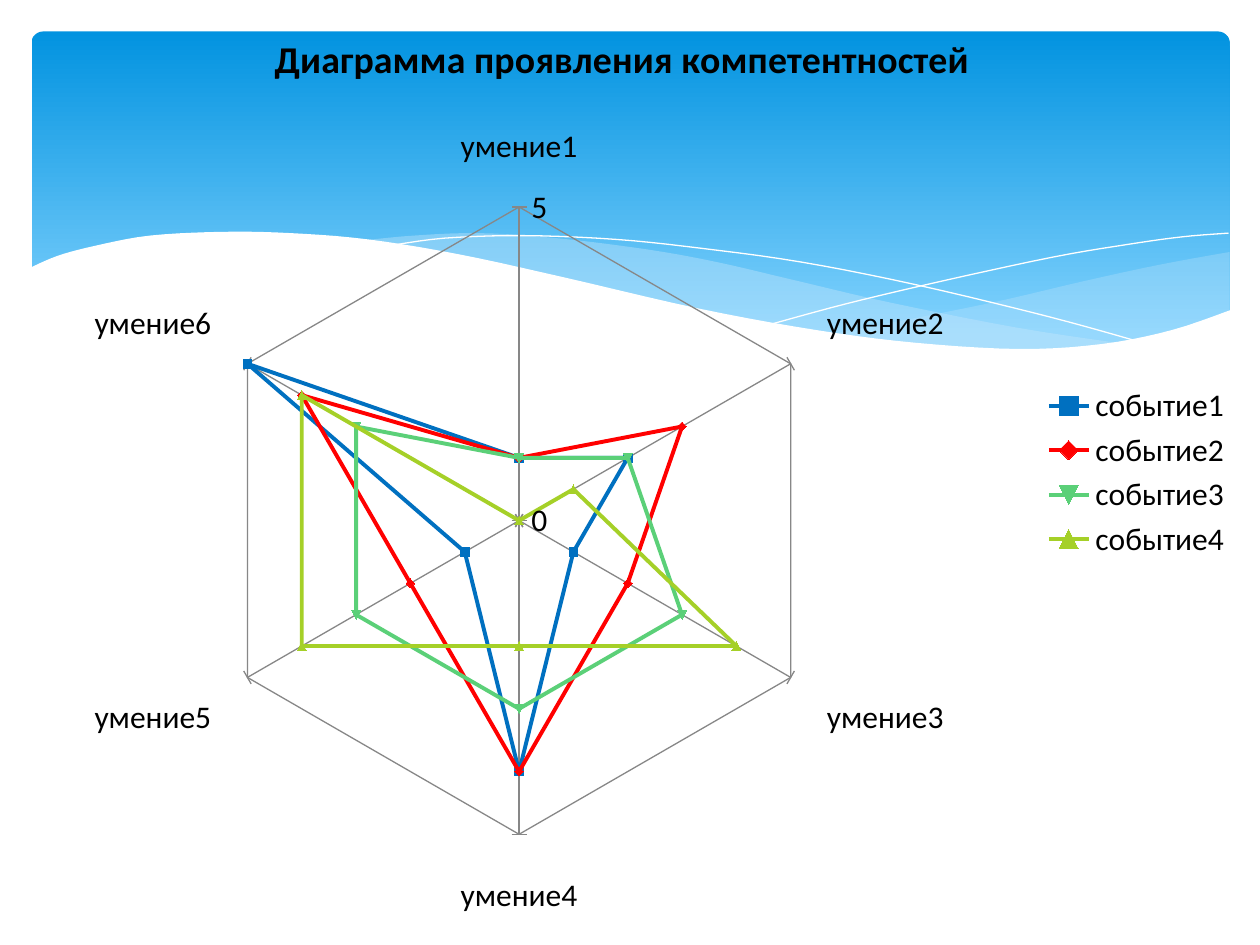
from lxml import etree
from pptx import Presentation
from pptx.chart.data import CategoryChartData
from pptx.dml.color import RGBColor
from pptx.enum.chart import XL_CHART_TYPE, XL_LEGEND_POSITION, XL_TICK_MARK
from pptx.enum.shapes import MSO_SHAPE
from pptx.oxml import parse_xml
from pptx.oxml.ns import nsdecls, qn
from pptx.util import Cm, Pt

RADAR = XL_CHART_TYPE.RADAR_MARKERS
RIGHT = XL_LEGEND_POSITION.RIGHT
OUTSIDE, CROSS = XL_TICK_MARK.OUTSIDE, XL_TICK_MARK.CROSS
ROUNDED = MSO_SHAPE.ROUNDED_RECTANGLE

FONT = "Calibri"
CM_PER_UNIT = 2.54
COLORS = {
    "text": "000000", "white": "FFFFFF", "wave": "C6E7FC", "grid": "878787",
    "sky_top": "0293E0", "sky_bottom": "83D3FE",
    "событие1": "0070C0", "событие2": "FF0000",
    "событие3": "5BD078", "событие4": "A5D028",
}
TITLE = "Диаграмма проявления компетентностей"
CATEGORIES = [f"умение{i}" for i in range(1, 7)]
SERIES = {
    "событие1": (1, 2, 1, 4, 1, 5),
    "событие2": (1, 3, 2, 4, 2, 4),
    "событие3": (1, 2, 3, 3, 3, 3),
    "событие4": (0, 1, 4, 2, 4, 4),
}
PLOT = {"x": 0.165, "y": 0.219, "w": 0.504, "h": 0.664}

WAVES = [
    {"curves": [
        [(9.76, 2), (9.21, 2.1), (8.61, 2.23), (7.79, 2.42), (6.61, 2.65)],
        [(6.61, 2.65), (7.19, 2.72), (7.69, 2.77), (8.24, 2.77),
         (8.81, 2.73), (9.35, 2.62), (9.76, 2.47)]],
     "fill": "wave", "alpha": 29},
    {"curves": [
        [(8.93, 2.73), (8.07, 2.6), (7.06, 2.4), (6.29, 2.22), (5.69, 2.08),
         (5.14, 1.98), (4.42, 1.89), (3.8, 1.85), (3.28, 1.87), (2.86, 1.91)],
        [(2.86, 1.91), (3.42, 1.99), (4.04, 2.11), (4.91, 2.32), (5.66, 2.48),
         (6.34, 2.61), (6.95, 2.7), (7.61, 2.77), (8.18, 2.78), (8.93, 2.73)]],
     "fill": "wave", "alpha": 40},
    {"curves": [
        [(3.09, 1.95), (3.53, 1.89), (4.16, 1.87), (4.89, 1.9), (5.56, 1.97),
         (6.36, 2.08), (7.27, 2.26), (8.31, 2.51), (9.07, 2.72)]],
     "line": "white"},
    {"curves": [
        [(6.13, 2.57), (6.72, 2.41), (7.48, 2.23), (8.36, 2.04),
         (8.95, 1.94), (9.38, 1.88), (9.75, 1.85)]],
     "line": "white"},
    {"curves": [
        [(9.77, 2.46), (9.3, 2.62), (8.75, 2.73), (8.09, 2.77), (7.26, 2.72),
         (6.48, 2.62), (5.55, 2.45), (4.47, 2.2), (3.65, 2.02), (2.92, 1.9),
         (2.3, 1.85), (1.77, 1.84), (1.19, 1.87), (0.76, 1.95), (0.46, 2.03),
         (0.23, 2.13)],
        [(0.23, 3.29), (9.77, 3.29)]],
     "fill": "white"},
]


def rgb(name):
    return RGBColor.from_string(COLORS[name])


def units(value):
    return Cm(value * CM_PER_UNIT)


def smooth_curve(points, steps=5):
    ends = [points[0], *points, points[-1]]
    curve = [points[0]]
    for a, b, c, d in zip(ends, ends[1:], ends[2:], ends[3:]):
        for t in (i / steps for i in range(1, steps + 1)):
            curve.append(tuple(
                0.5 * (2 * q + (r - p) * t + (2 * p - 5 * q + 4 * r - s) * t ** 2
                       + (3 * q - p - 3 * r + s) * t ** 3)
                for p, q, r, s in zip(a, b, c, d)))
    return curve


def add_wave(shapes, curves, fill=None, alpha=100, line=None):
    points = [(units(x), units(y)) for c in curves for x, y in smooth_curve(c)]
    builder = shapes.build_freeform(*points[0], scale=1.0)
    builder.add_line_segments(points[1:], close=fill is not None)
    sp = builder.convert_to_shape()
    sp.shadow.inherit = False
    if fill:
        sp.fill.solid()
        sp.fill.fore_color.rgb = rgb(fill)
        color = sp.fill._xPr.find(".//" + qn("a:srgbClr"))
        etree.SubElement(color, qn("a:alpha"), val=str(alpha * 1000))
    else:
        sp.fill.background()
    if line:
        sp.line.color.rgb = rgb(line)
        sp.line.width = Pt(0)
    else:
        sp.line.fill.background()


def add_sky(shapes):
    sp = shapes.add_shape(ROUNDED, units(0.25), units(0.25), units(9.51), units(2.7))
    sp.adjustments[0] = 0.034
    sp.shadow.inherit = False
    sp.line.fill.background()
    sp.fill.gradient()
    sp.fill.gradient_angle = 270
    stops = zip(sp.fill.gradient_stops, ("sky_top", "sky_bottom"), (0, 0.9))
    for stop, color, position in stops:
        stop.color.rgb = rgb(color)
        stop.position = position


def format_font(font, size=18, bold=False, color="text"):
    font.name = FONT
    font.size = Pt(size)
    font.bold = bold
    font.color.rgb = rgb(color)


def write_text(tf, text, **style):
    r = tf.paragraphs[0].add_run()
    r.text = text
    format_font(r.font, **style)


def set_line(line, color, width):
    line.color.rgb = rgb(color)
    line.width = Pt(width)


def set_plot_layout(chart):
    area = chart._chartSpace.chart.plotArea
    for old in area.findall(qn("c:layout")):
        area.remove(old)
    sizes = "".join(f'<c:{k} val="{v}"/>' for k, v in PLOT.items())
    area.insert(0, parse_xml(
        f'<c:layout {nsdecls("c")}><c:manualLayout><c:layoutTarget val="inner"/>'
        f'<c:xMode val="edge"/><c:yMode val="edge"/>{sizes}'
        '</c:manualLayout></c:layout>'))


def add_radar(shapes):
    data = CategoryChartData()
    data.categories = CATEGORIES
    for name, values in SERIES.items():
        data.add_series(name, values)
    chart = shapes.add_chart(RADAR, 0, 0, units(9.88), units(7.5), data).chart
    format_font(chart.font)
    chart.has_title = True
    write_text(chart.chart_title.text_frame, TITLE, size=21.6, bold=True)
    chart.has_legend = True
    chart.legend.position = RIGHT
    chart.legend.include_in_layout = False
    set_plot_layout(chart)
    value_axis = chart.value_axis
    value_axis.minimum_scale, value_axis.maximum_scale = 0, 5
    value_axis.major_unit = 5
    for axis, tick in ((chart.category_axis, OUTSIDE), (value_axis, CROSS)):
        axis.major_tick_mark = tick
        axis.has_major_gridlines = True
        set_line(axis.major_gridlines.format.line, "grid", 0.75)
        set_line(axis.format.line, "grid", 0.75)
    for series in chart.plots[0].series:
        series.smooth = False
        set_line(series.format.line, series.name, 2.25)
        marker = series.marker
        marker.size = 5
        marker.format.fill.solid()
        marker.format.fill.fore_color.rgb = rgb(series.name)
        set_line(marker.format.line, series.name, 0.75)


def main():
    prs = Presentation()
    prs.slide_width, prs.slide_height = Cm(25.4), Cm(19.05)
    s = prs.slides.add_slide(prs.slide_layouts[6])
    add_sky(s.shapes)
    for wave in WAVES:
        add_wave(s.shapes, **wave)
    add_radar(s.shapes)
    prs.save("out.pptx")


if __name__ == "__main__":
    main()
